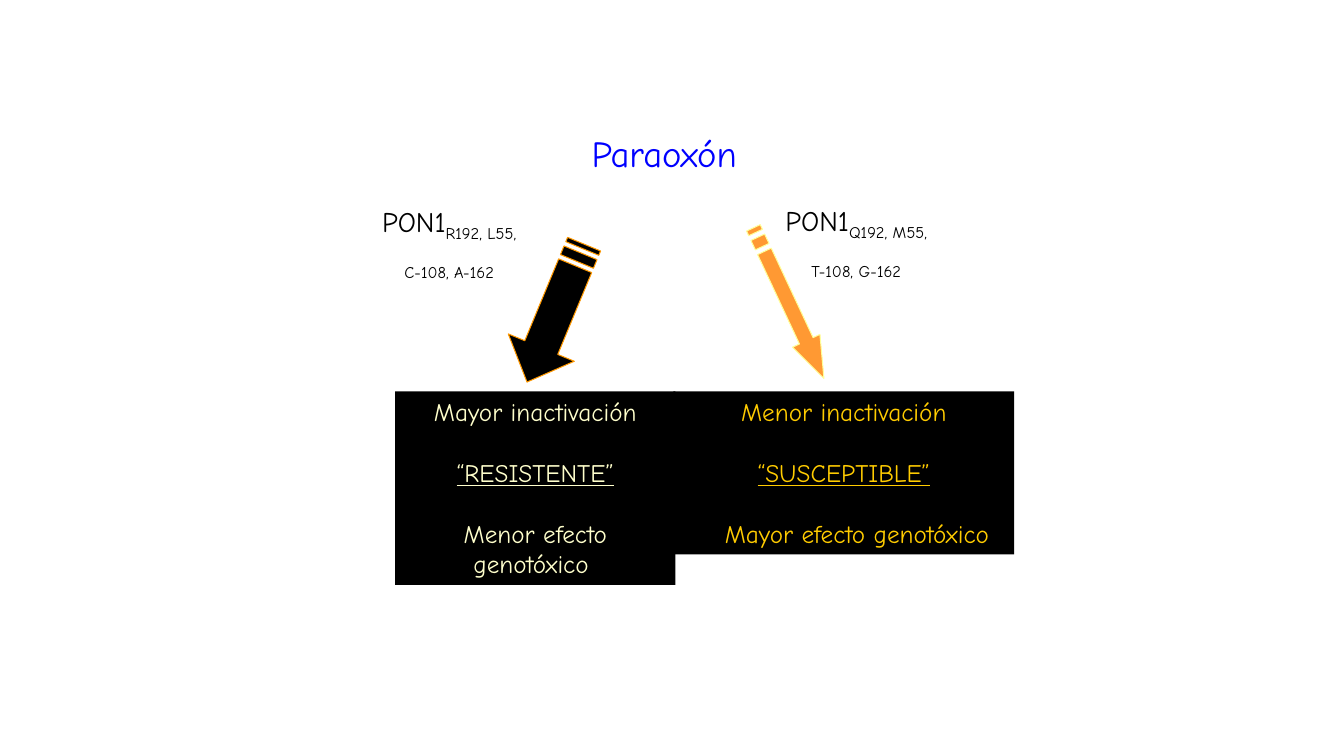
from pptx import Presentation
from pptx.dml.color import RGBColor
from pptx.enum.text import MSO_ANCHOR, MSO_AUTO_SIZE, PP_ALIGN
from pptx.oxml.ns import qn
from pptx.util import Cm, Pt
from lxml.etree import SubElement

FONT = "Comic Neue"
HUES = {
    "black": "000000", "white": "FFFFFF", "blue": "0000FF",
    "cream": "FFFFCC", "gold": "FFCC00", "amber": "FF9900",
    "orange": "FF9933", "lemon": "FFFF99",
}


def hue(name):
    return RGBColor.from_string(HUES[name])


def place(shape, box):
    shape.left, shape.top, shape.width, shape.height = map(Cm, box)


def setup(frame):
    frame.word_wrap = True
    frame.auto_size = MSO_AUTO_SIZE.NONE
    frame.vertical_anchor = MSO_ANCHOR.TOP


def add_run(para, text, size, color):
    run = para.add_run()
    run.text = text
    run.font.name = FONT
    run.font.size = Pt(size)
    run.font.color.rgb = hue(color)
    return run


def add_title(slide, text, box):
    title = slide.shapes.title
    place(title, box)
    title.line.color.rgb = hue("white")
    title.line.width = Pt(3)
    setup(title.text_frame)
    para = title.text_frame.paragraphs[0]
    para.alignment = PP_ALIGN.CENTER
    add_run(para, text, 26.2, "blue")


def add_label(slide, gene, sites, box):
    label = slide.shapes.add_textbox(*map(Cm, box))
    setup(label.text_frame)
    para = label.text_frame.paragraphs[0]
    para.alignment = PP_ALIGN.CENTER
    add_run(para, gene, 20.2, "black")
    run = add_run(para, sites, 20.2, "black")
    run.font._element.set("baseline", "-25000")


def add_panel(panel, lines, color, box, shift=0):
    place(panel, box)
    panel.fill.solid()
    panel.fill.fore_color.rgb = hue("black")
    frame = panel.text_frame
    setup(frame)
    last = len(lines) - 1
    for i, text in enumerate(lines):
        para = frame.paragraphs[0] if i == 0 else frame.add_paragraph()
        para.alignment = PP_ALIGN.CENTER
        para.space_before = Pt(21.8 if i else 0)
        props = para._p.get_or_add_pPr()
        props.set("marL", str(Cm(shift if i == last else 0)))
        props.set("indent", "0")
        SubElement(props, qn("a:buNone"))
        run = add_run(para, text, 18, color)
        run.font.underline = i == 1


def add_arrow(slide, box, angle, fill, line):
    left, top, wide, high = map(Cm, box)

    def spot(x, y):
        return left + x * wide, top + y * high

    def bar(start, end):
        return [(start, .25), (end, .25), (end, .75), (start, .75)]

    head = [(5 / 32, .25), (.75, .25), (.75, 0), (1, .5),
            (.75, 1), (.75, .75), (5 / 32, .75)]
    pen = slide.shapes.build_freeform(*spot(*head[0]))
    pen.add_line_segments([spot(*p) for p in head[1:]], close=True)
    for part in (bar(2 / 32, 4 / 32), bar(0, 1 / 32)):
        pen.move_to(*spot(*part[0]))
        pen.add_line_segments([spot(*p) for p in part[1:]], close=True)
    arrow = pen.convert_to_shape()
    arrow.rotation = angle
    arrow.shadow.inherit = False
    arrow.fill.solid()
    arrow.fill.fore_color.rgb = hue(fill)
    arrow.line.color.rgb = hue(line)
    arrow.line.width = Pt(0.75)


def main():
    deck = Presentation()
    deck.slide_width, deck.slide_height = Cm(33.87), Cm(19.05)
    slide = deck.slides.add_slide(deck.slide_layouts.get_by_name("Two Content"))
    add_title(slide, "Paraoxón", (14.05, 3.18, 5.38, 1.37))
    add_panel(
        slide.placeholders[1],
        ["Mayor inactivación", "“RESISTENTE”", "Menor efecto genotóxico "],
        "cream", (9.96, 9.86, 7.06, 4.88))
    add_panel(
        slide.placeholders[2],
        ["Menor inactivación", "“SUSCEPTIBLE”", "Mayor efecto genotóxico"],
        "gold", (16.97, 9.86, 8.59, 4.11), 0.66)
    add_label(slide, "PON1", "R192, L55, C-108, A-162", (9.25, 5.03, 4.14, 2.29))
    add_label(slide, "PON1", "Q192, M55, T-108, G-162", (19.51, 5, 4.14, 2.29))
    add_arrow(slide, (12.12, 6.99, 3.76, 1.8), 112.5, "black", "amber")
    add_arrow(slide, (17.78, 7.26, 4.19, 0.76), 64.9, "orange", "lemon")
    deck.save("out.pptx")


if __name__ == "__main__":
    main()
